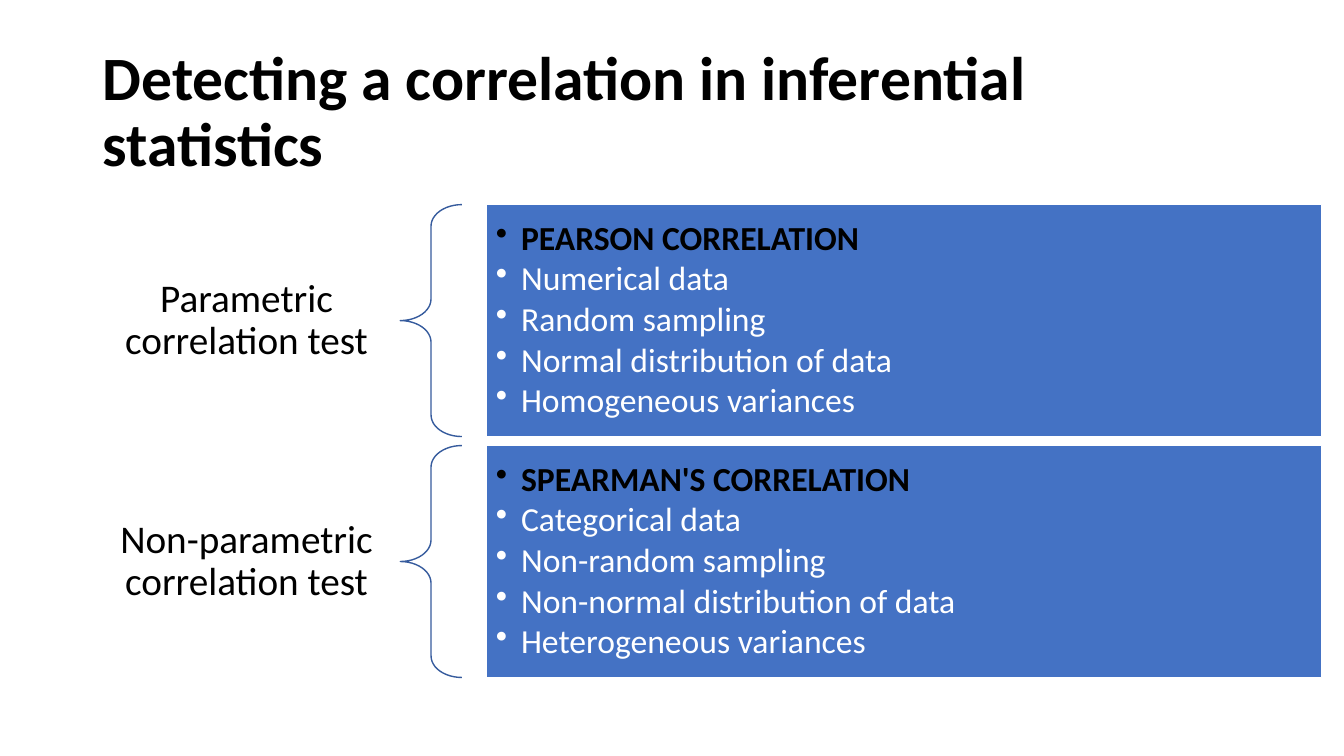
from dataclasses import dataclass

from lxml import etree
from pptx import Presentation
from pptx.dml.color import RGBColor
from pptx.enum.shapes import MSO_SHAPE
from pptx.enum.text import MSO_ANCHOR, PP_ALIGN
from pptx.oxml.ns import qn
from pptx.util import Inches, Pt

RECTANGLE, LEFT_BRACE = MSO_SHAPE.RECTANGLE, MSO_SHAPE.LEFT_BRACE
MIDDLE = MSO_ANCHOR.MIDDLE
LEFT, CENTER = PP_ALIGN.LEFT, PP_ALIGN.CENTER


@dataclass(frozen=True)
class Theme:
    font: str = "Calibri"
    ink: RGBColor = RGBColor(0x00, 0x00, 0x00)
    paper: RGBColor = RGBColor(0xFF, 0xFF, 0xFF)
    panel: RGBColor = RGBColor(0x44, 0x72, 0xC4)
    brace: RGBColor = RGBColor(0x36, 0x5B, 0x9D)
    title_size: float = 44
    label_size: float = 28
    list_size: float = 24
    list_gap: float = 3.1
    line_width: float = 1
    line_spacing: float = 0.9


# Horizontal and vertical positions, in percent of the slide
TITLE = (6.9, 5.33, 86.25, 19.33)
LABEL_LEFT, LABEL_WIDTH, LABEL_HEIGHT = 6.9, 22.88, 13.6
BRACE_LEFT, BRACE_WIDTH = 29.78, 4.58
PANEL_LEFT, PANEL_WIDTH = 36.16, 62.19
ROW_TOP, ROW_HEIGHT, ROW_PITCH = 27.07, 30.67, 31.87

TESTS = [
    ("Parametric correlation test", "PEARSON CORRELATION",
     ["Numerical data", "Random sampling", "Normal distribution of data",
      "Homogeneous variances"]),
    ("Non-parametric correlation test", "SPEARMAN'S CORRELATION",
     ["Categorical data", "Non-random sampling",
      "Non-normal distribution of data", "Heterogeneous variances"]),
]


class SlideBuilder:
    def __init__(self, deck, theme):
        self.deck, self.theme = deck, theme
        self.page = deck.slides.add_slide(deck.slide_layouts[6])

    def place(self, left, top, width, height):
        across, down = self.deck.slide_width / 100, self.deck.slide_height / 100
        return (round(left * across), round(top * down),
                round(width * across), round(height * down))

    def set_frame(self, frame, side, edge):
        frame.word_wrap = True
        frame.vertical_anchor = MIDDLE
        frame.margin_left = frame.margin_right = Inches(side)
        frame.margin_top = frame.margin_bottom = Inches(edge)

    def format_para(self, para, size, color, bold=False, align=LEFT):
        para.alignment = align
        para.line_spacing = self.theme.line_spacing
        for span in para.runs:
            span.font.name = self.theme.font
            span.font.size = Pt(size)
            span.font.bold = bold
            span.font.color.rgb = color

    def text(self, area, words, size, bold=False, align=LEFT, side=0.1, edge=0.05):
        box = self.page.shapes.add_textbox(*self.place(*area))
        self.set_frame(box.text_frame, side, edge)
        box.text_frame.text = words
        self.format_para(box.text_frame.paragraphs[0], size, self.theme.ink, bold, align)

    def shape(self, kind, area, line, fill=None):
        shape = self.page.shapes.add_shape(kind, *self.place(*area))
        shape.shadow.inherit = False
        shape.line.color.rgb = line
        shape.line.width = Pt(self.theme.line_width)
        if fill is None:
            shape.fill.background()
        else:
            shape.fill.solid()
            shape.fill.fore_color.rgb = fill
        return shape

    def brace(self, area):
        brace = self.shape(LEFT_BRACE, area, self.theme.brace)
        brace.adjustments[0] = 0.35
        brace.adjustments[1] = 0.5

    def bullet(self, para):
        para.level = 1
        para.space_after = Pt(self.theme.list_gap)
        props = para._p.get_or_add_pPr()
        props.set("marL", str(Inches(0.25)))
        props.set("indent", str(Inches(-0.25)))
        etree.SubElement(props, qn("a:buChar")).set("char", "•")

    def panel(self, area, heading, items):
        theme = self.theme
        frame = self.shape(RECTANGLE, area, theme.paper, theme.panel).text_frame
        self.set_frame(frame, 0.1, 0.1)
        frame.text = "\n".join([heading, *items])
        for index, para in enumerate(frame.paragraphs):
            is_heading = index == 0
            color = theme.ink if is_heading else theme.paper
            self.format_para(para, theme.list_size, color, is_heading)
            self.bullet(para)


def main():
    deck = Presentation()
    deck.slide_width, deck.slide_height = Inches(13.33), Inches(7.5)
    theme = Theme()
    builder = SlideBuilder(deck, theme)

    # Title
    builder.text(TITLE, "Detecting a correlation in inferential statistics",
                 theme.title_size, bold=True)

    # One row per test: label, brace, panel of conditions
    for row, (label, heading, items) in enumerate(TESTS):
        top = ROW_TOP + row * ROW_PITCH
        label_top = top + (ROW_HEIGHT - LABEL_HEIGHT) / 2
        builder.text((LABEL_LEFT, label_top, LABEL_WIDTH, LABEL_HEIGHT), label,
                     theme.label_size, align=CENTER, side=0.22, edge=0.08)
        builder.brace((BRACE_LEFT, top, BRACE_WIDTH, ROW_HEIGHT))
        builder.panel((PANEL_LEFT, top, PANEL_WIDTH, ROW_HEIGHT), heading, items)

    deck.save("out.pptx")


if __name__ == "__main__":
    main()
